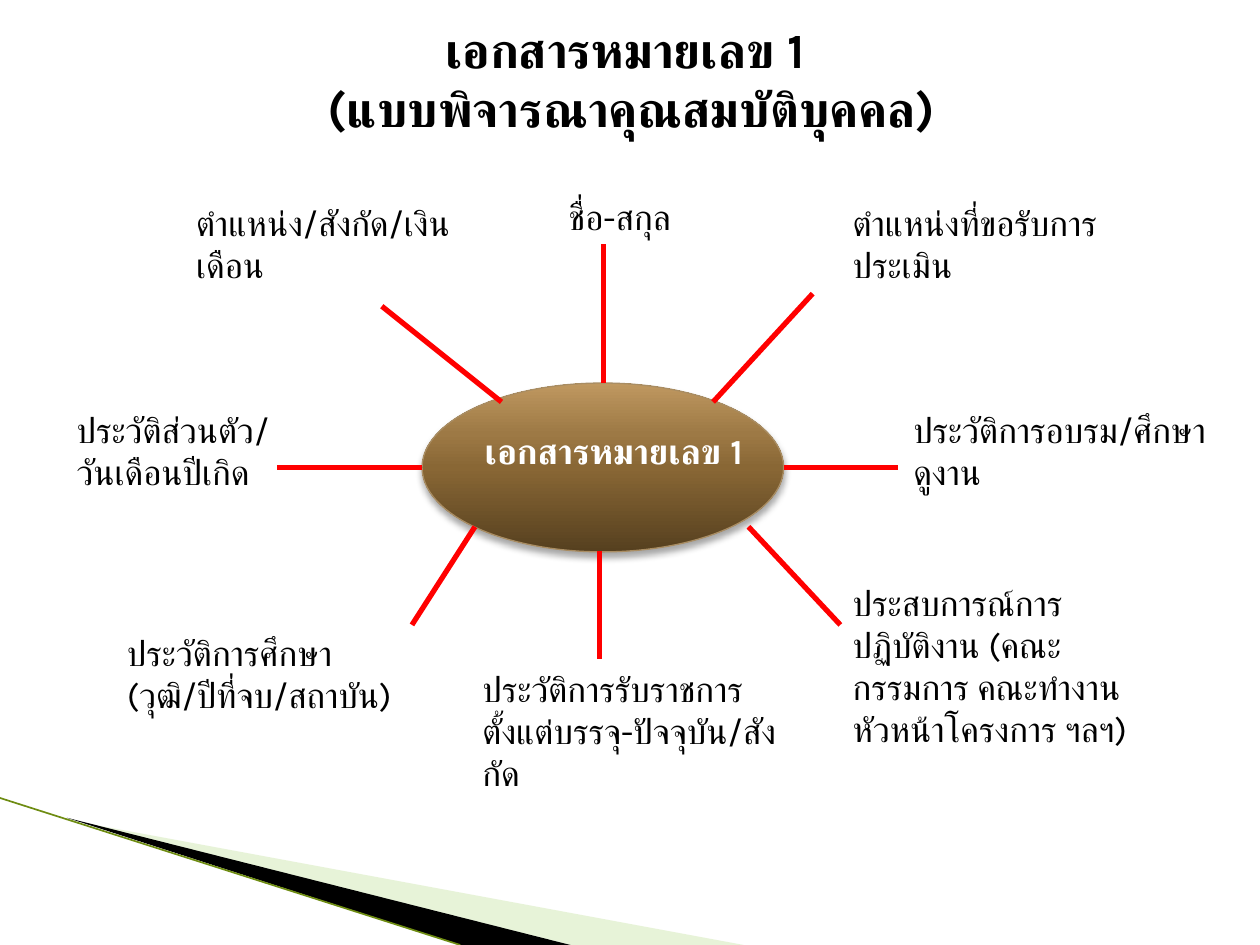
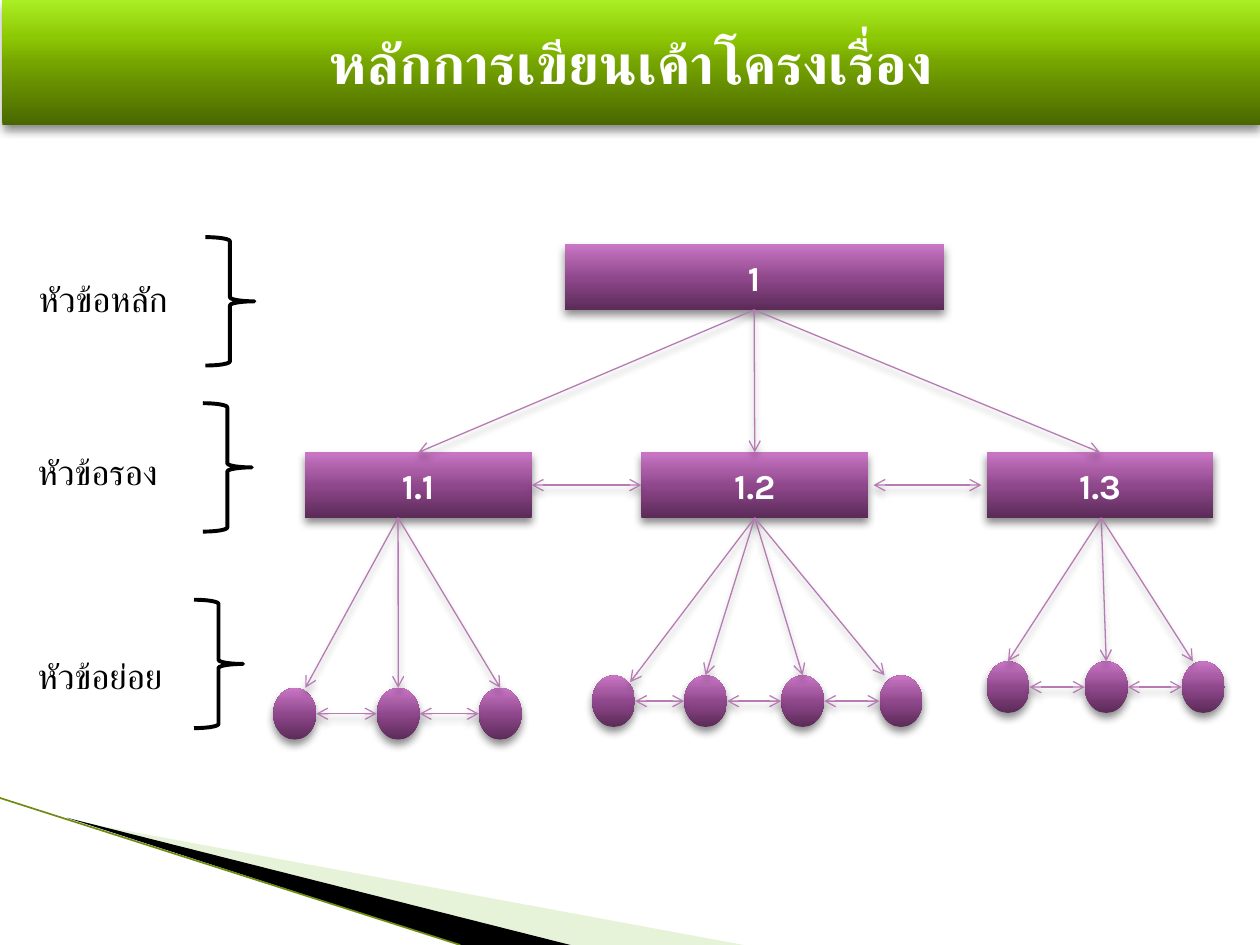
from collections import namedtuple
from itertools import pairwise

from lxml.etree import SubElement
from pptx import Presentation
from pptx.dml.color import RGBColor
from pptx.enum.shapes import MSO_CONNECTOR, MSO_SHAPE
from pptx.enum.text import MSO_ANCHOR, PP_ALIGN
from pptx.oxml.ns import qn
from pptx.util import Pt

Box = namedtuple("Box", "x y w h")
LEFT, MID = PP_ALIGN.LEFT, PP_ALIGN.CENTER


class Theme:
    face = "Karla"
    black, white, red = "000000", "FFFFFF", "FF0000"
    pale, edge, link, rim = "C5E19F", "6E8C12", "B77BB4", "A98D63"
    # Gradient stops run from the bottom up
    brown = ["56401F", "896735", "9D7945", "BF9860"]
    green = ["496700", "76A500", "8DC804", "AAEE25"]
    plum = ["5B2B58", "90488D", "A65BA2", "CA76C6"]
    stops = [0, 50, 70, 100]
    head = {"size": Pt(28), "bold": True}
    band = {"size": Pt(32), "bold": True}
    body = {"size": Pt(20), "bold": False}
    strong = {"size": Pt(20), "bold": True}
    # Opacity, blur and distance of the two shadows
    deep, soft = (45, 5, 3), (35, 4, 3)


def color(code):
    return RGBColor.from_string(code)


def apply(item, values):
    for key, value in values.items():
        setattr(item, key, value)


def fade(node, share):
    SubElement(node, qn("a:alpha"), val=str(share * 1000))


def shade(props, look):
    """Give the shape properties a downward shadow, or none."""
    list_ = props.find(qn("a:effectLst"))
    if list_ is None:
        list_ = SubElement(props, qn("a:effectLst"))
    if look:
        alpha, blur, dist = look
        outer = SubElement(list_, qn("a:outerShdw"), blurRad=str(Pt(blur)),
                           dist=str(Pt(dist)), dir="5400000", rotWithShape="0")
        fade(SubElement(outer, qn("a:srgbClr"), val=Theme.black), alpha)


def blend(shape, codes):
    shape.fill.gradient()
    shape.fill.gradient_angle = 90
    stops = shape._element.spPr.find(qn("a:gradFill")).find(qn("a:gsLst"))
    stops.clear()
    for code, place in zip(codes, Theme.stops):
        stop = SubElement(stops, qn("a:gs"), pos=str(place * 1000))
        SubElement(stop, qn("a:srgbClr"), val=code)


def write(shape, text, style, code=Theme.black, align=LEFT,
          anchor=MSO_ANCHOR.MIDDLE):
    frame = shape.text_frame
    apply(frame, {"word_wrap": True, "vertical_anchor": anchor})
    line = frame.paragraphs[0]
    line.text = text
    line.alignment = align
    for run in line.runs:
        apply(run.font, {**style, "name": Theme.face})
        run.font.color.rgb = color(code)
        SubElement(run._r.get_or_add_rPr(), qn("a:cs"), typeface=Theme.face)


def label(slide, box, text, style=Theme.body, **look):
    write(slide.shapes.add_textbox(*map(Pt, box)), text, style, **look)


def solid(slide, kind, box, codes, look=Theme.deep, rim=None):
    """Add a shape with a gradient fill and a shadow."""
    shape = slide.shapes.add_shape(kind, *map(Pt, box))
    blend(shape, codes)
    if rim:
        shape.line.color.rgb = color(rim)
        shape.line.width = Pt(0.75)
    else:
        shape.line.fill.background()
    shape.shadow.inherit = False
    shade(shape._element.spPr, look)
    return shape


def line(slide, start, end, code, width, look=None, ends=()):
    wire = slide.shapes.add_connector(MSO_CONNECTOR.STRAIGHT,
                                      *map(Pt, (*start, *end)))
    wire.line.color.rgb = color(code)
    wire.line.width = Pt(width)
    for end in ends:
        SubElement(wire.line._get_or_add_ln(), qn(f"a:{end}End"), type="arrow")
    shade(wire._element.spPr, look)


def arrow(slide, start, end, both=False):
    ends = ("head", "tail") if both else ("tail",)
    line(slide, start, end, Theme.link, 0.75, Theme.soft, ends)


def wedge(slide, box, points, code, alpha=100):
    spots = [(Pt(box.x + x), Pt(box.y + y)) for x, y in points]
    pen = slide.shapes.build_freeform(*spots[0], scale=1.0)
    pen.add_line_segments(spots[1:])
    shape = pen.convert_to_shape()
    shape.fill.solid()
    shape.fill.fore_color.rgb = color(code)
    fade(shape._element.spPr.find(qn("a:solidFill"))[0], alpha)
    shape.line.fill.background()
    shape.shadow.inherit = False


def corner(slide, box):
    """Draw the swoosh in the lower left corner."""
    base = box.h
    wedge(slide, box, [(39.6, 12.7), (425, base), (326, base), (39.6, 12)],
          Theme.pale, 40)
    wedge(slide, box, [(38.2, 11.3), (326, base), (263, base)], Theme.black)
    line(slide, (box.x, box.y), (box.x + 263, box.y + base), Theme.edge, 0.95)


# Hub topics: text, label corner, spoke start, spoke end, alignment
TOPICS = [
    ("ตำแหน่ง/สังกัด/เงินเดือน", (69, 3.6), (250.6, 121.7), (182.2, 67), LEFT),
    ("ชื่อ-สกุล", (224.6, 0), (308.9, 110.9), (308.9, 31.7), MID),
    ("ประวัติส่วนตัว/\vวันเดือนปีเกิด", (0.7, 121.7), (205.2, 159.1),
     (122.4, 159.1), LEFT),
    ("ประวัติการศึกษา (วุฒิ/ปีที่จบ/สถาบัน)", (29.5, 249.1), (235.4, 193),
     (199.4, 249.1), LEFT),
    ("ประวัติการรับราชการ ตั้งแต่บรรจุ-ปัจจุบัน/สังกัด", (232.6, 270),
     (306.7, 206.6), (306.7, 268.6), LEFT),
    ("ประสบการณ์การ\vปฏิบัติงาน (คณะกรรมการ คณะทำงาน หัวหน้าโครงการ ฯลฯ)",
     (444.2, 221), (391.7, 193), (444.2, 249.1), LEFT),
    ("ประวัติการอบรม/ศึกษาดูงาน", (478.8, 121.7), (411.8, 159.1),
     (477.4, 159.1), LEFT),
    ("ตำแหน่งที่ขอรับการประเมิน", (444.2, 3.6), (371.5, 121.7),
     (428.4, 59.8), LEFT),
]


def hub(slide, box):
    """Draw the central oval with its spokes and topics."""
    def at(spot):
        return box.x + spot[0], box.y + spot[1]

    solid(slide, MSO_SHAPE.OVAL, (*at((205.2, 110.9)), 206.6, 96.5),
          Theme.brown, Theme.soft, Theme.rim)
    label(slide, (*at((229.7, 133.9)), 170, 55.4), "เอกสารหมายเลข 1",
          Theme.strong, code=Theme.white, align=MID, anchor=MSO_ANCHOR.TOP)
    for text, spot, start, end, align in TOPICS:
        label(slide, (*at(spot), 187.2, 55.4), text, align=align,
              anchor=MSO_ANCHOR.TOP)
        line(slide, at(start), at(end), Theme.red, 3)


# Branches: text, left, fan start, leaf top, leaf lefts, arrow tip shifts
BRANCHES = [
    ("1.1", 18.2, 71.5, 253.4, [0.2, 59.3, 117.6], [(6, 0), (0, 0), (0, 0)]),
    ("1.2", 210.5, 275.3, 246.2, [182.4, 235, 290.4, 346.6],
     [(9.4, 4), (0, 0), (0, 0), (-9.4, 0)]),
    ("1.3", 407.8, 473.3, 238.2, [407.8, 463.9, 519.4],
     [(0, 0), (0, 0), (-6, 0)]),
]
ROOT = Box(166.6, 0, 216.7, 37.4)
NODE = Box(0, 118.8, 129.6, 37.4)
LEAF = Box(0, 0, 24.5, 29.5)


def tree(slide, box):
    """Draw the outline: one root, three branches and their leaves."""
    def at(x, y):
        return box.x + x, box.y + y

    def node(text, x, size):
        shape = solid(slide, MSO_SHAPE.RECTANGLE,
                      (*at(x, size.y), size.w, size.h), Theme.plum)
        write(shape, text, Theme.strong, Theme.white, MID)

    node("1", ROOT.x, ROOT)
    for text, left, fan, top, lefts, tips in BRANCHES:
        node(text, left, NODE)
        for x in lefts:
            solid(slide, MSO_SHAPE.OVAL, (*at(x, top), LEAF.w, LEAF.h),
                  Theme.plum)
        # Links between leaves, then the fan above them
        mid = top + LEAF.h / 2
        for one, two in pairwise(lefts):
            arrow(slide, at(one + LEAF.w, mid), at(two, mid), True)
        for x, (dx, dy) in zip(lefts, tips):
            arrow(slide, at(fan, NODE.y + NODE.h),
                  at(x + LEAF.w / 2 + dx, top + dy))
        arrow(slide, at(ROOT.x + ROOT.w / 2, ROOT.h),
              at(left + NODE.w / 2, NODE.y))

    # Links between branches
    mid = NODE.y + NODE.h / 2
    for (one, two), gap in zip(pairwise(b[1] for b in BRANCHES), (0, 3)):
        arrow(slide, at(one + NODE.w + gap, mid), at(two - gap, mid), True)


def level(slide, box, text, shift):
    """Name one level of the outline and bracket it."""
    label(slide, box, text)
    brace = slide.shapes.add_shape(
        MSO_SHAPE.RIGHT_BRACE, Pt(box.x + shift[0]), Pt(box.y + shift[1]),
        Pt(28), Pt(73.4))
    brace.fill.background()
    brace.line.color.rgb = color(Theme.black)
    brace.line.width = Pt(2.25)
    brace.shadow.inherit = False


LEVELS = [
    ("หัวข้อหลัก", Box(15, 142, 124.6, 57), (102.4, -6.5)),
    ("หัวข้อรอง", Box(14.4, 235.4, 124.6, 67.7), (101.5, -5)),
    ("หัวข้อย่อย", Box(14.4, 343.4, 124.6, 85), (96.5, -0.7)),
]


def sheet(deck):
    slide = deck.slides.add_slide(deck.slide_layouts[6])
    corner(slide, Box(0, 456, 720, 84))
    return slide


def main():
    deck = Presentation()
    apply(deck, {"slide_width": Pt(720), "slide_height": Pt(540)})

    # Form overview
    form = sheet(deck)
    label(form, Box(36.7, 0, 648, 90),
          "เอกสารหมายเลข 1 \v(แบบพิจารณาคุณสมบัติบุคคล)", Theme.head, align=MID)
    hub(form, Box(36, 108, 648, 350))

    # Outline principles
    plan = sheet(deck)
    band = solid(plan, MSO_SHAPE.RECTANGLE, Box(1.4, 0, 718.6, 71.3),
                 Theme.green)
    write(band, "หลักการเขียนเค้าโครงเรื่อง", Theme.band, Theme.white, MID)
    tree(plan, Box(156, 139.7, 544, 283))
    for text, box, shift in LEVELS:
        level(plan, box, text, shift)

    deck.save("out.pptx")


if __name__ == "__main__":
    main()
